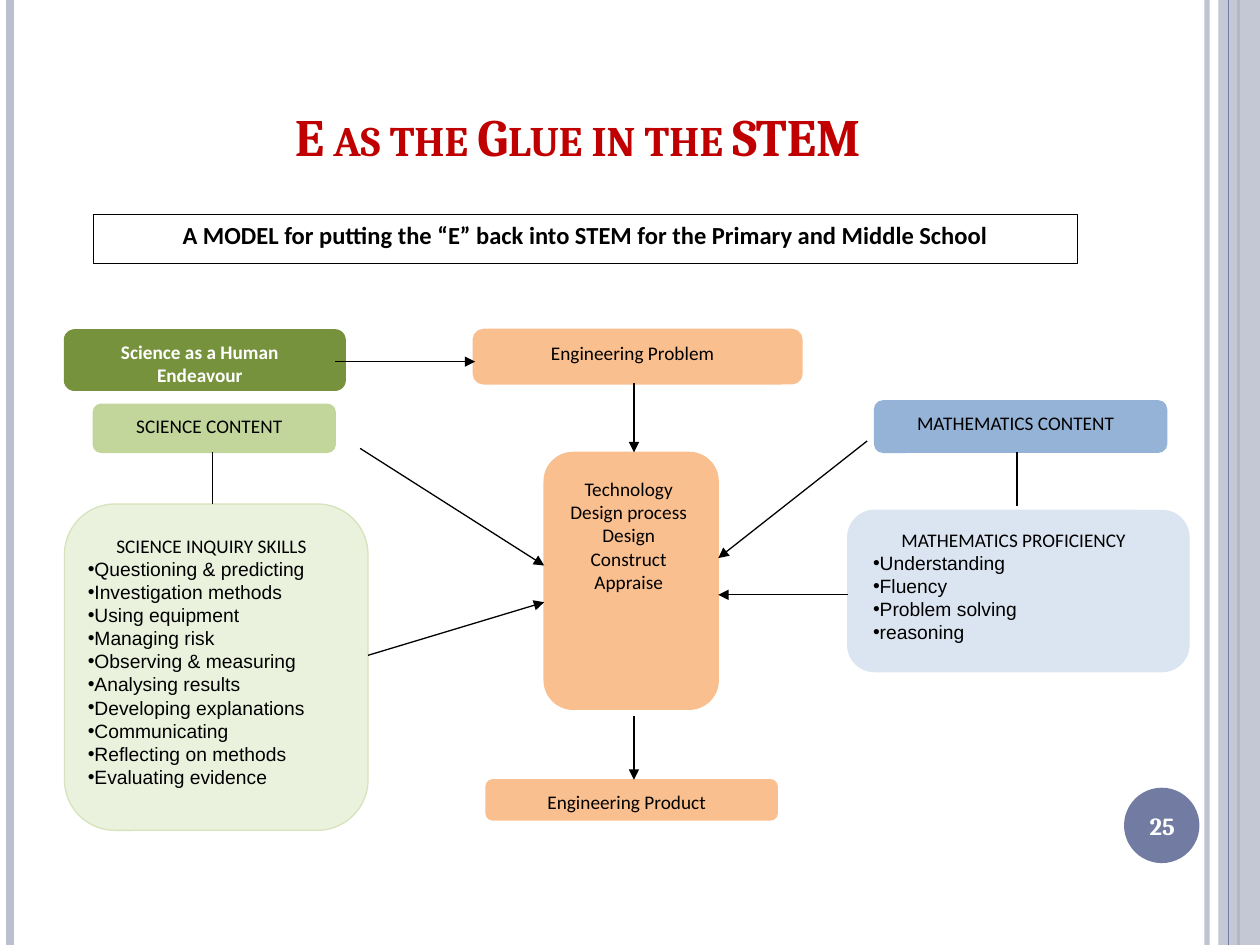
import pptx
import pptx.dml.color
import pptx.enum.shapes
import pptx.enum.text
import pptx.oxml.ns
import pptx.util
from lxml import etree
from pptx.util import Cm

COLORS = {
    "black": "000000", "white": "FFFFFF", "title": "C00000",
    "stripe": "BCBFCE", "accent": "727CA3", "orange": "FABF8F",
    "dark_green": "76923C", "green": "C2D69B", "pale_green": "EAF1DD",
    "green_edge": "D6E3BC", "blue": "95B3D7", "pale_blue": "DBE5F1",
}
SHAPES = pptx.enum.shapes.MSO_SHAPE
ALIGN = pptx.enum.text.PP_ALIGN
ANCHOR = pptx.enum.text.MSO_ANCHOR
LABEL_INSETS = (0.2, 0.08, 0.4, 0.08)


def rgb(color):
    return pptx.dml.color.RGBColor.from_string(COLORS[color])


def add_xml(parent, tag, **attributes):
    return etree.SubElement(parent, pptx.oxml.ns.qn(tag), attributes)


def set_alpha(fill_owner, percent):
    """Make the solid colour of a shape fill or a line partly transparent."""
    color = next(fill_owner.iter(pptx.oxml.ns.qn("a:srgbClr")))
    add_xml(color, "a:alpha", val=str(percent * 1000))


def add_box(slide, kind, box, fill, edge=None, width=0.75):
    shape = slide.shapes.add_shape(kind, *map(Cm, box))
    shape.shadow.inherit = False
    shape.fill.solid()
    shape.fill.fore_color.rgb = rgb(fill)
    if edge:
        shape.line.color.rgb = rgb(edge)
        shape.line.width = pptx.util.Pt(width)
    else:
        shape.line.fill.background()
    return shape


def add_line(slide, start, end, color="black", width=0.75, arrow=False):
    connector = slide.shapes.add_connector(
        pptx.enum.shapes.MSO_CONNECTOR.STRAIGHT, *map(Cm, start + end))
    connector.line.color.rgb = rgb(color)
    connector.line.width = pptx.util.Pt(width)
    if arrow:
        add_xml(connector.line._get_or_add_ln(), "a:tailEnd", type="triangle")
    add_xml(connector._element.spPr, "a:effectLst")
    return connector


def format_runs(paragraph, size, color="black", font="Calibri", bold=False):
    for run in paragraph.runs:
        run.font.size = pptx.util.Pt(size)
        run.font.name = font
        run.font.bold = bold
        run.font.color.rgb = rgb(color)


def write_lines(shape, lines, size=11, anchor=ANCHOR.TOP, **style):
    """Fill a shape with centred lines of one style."""
    frame = shape.text_frame
    frame.word_wrap = True
    frame.vertical_anchor = anchor
    frame.text = "\n".join(lines)
    for paragraph in frame.paragraphs:
        paragraph.alignment = ALIGN.CENTER
        format_runs(paragraph, size, **style)


def draw_backdrop(slide, width, height):
    def stripe(x, color, weight):
        return add_line(slide, (x, 0), (x, height), color, weight)

    set_alpha(stripe(width - 1.07, "stripe", 3)._element, 93)
    stripe(0.2, "stripe", 4.5)
    stripe(width - 0.43, "accent", 1.5)
    band = add_box(slide, SHAPES.RECTANGLE, (width - 0.84, 0, 0.84, height), "stripe")
    set_alpha(band._element, 87)
    stripe(width - 0.63, "accent", 0.75)


def draw_title(slide, box, text):
    title = slide.shapes.title
    title.left, title.top, title.width, title.height = map(Cm, box)
    write_lines(title, [text], 30, ANCHOR.MIDDLE,
                color="title", font="Cambria", bold=True)
    for run in title.text_frame.paragraphs[0].runs:
        run.font._element.set("cap", "small")


def draw_banner(slide, box, text):
    banner = add_box(slide, SHAPES.RECTANGLE, box, "white", "black")
    write_lines(banner, [text], 14, bold=True)


def draw_card(slide, box, fill, lines, insets=LABEL_INSETS, edge=None, width=0.75, **style):
    """Draw a rounded card with a text panel inset by left, top, right, bottom."""
    add_box(slide, SHAPES.ROUNDED_RECTANGLE, box, fill, edge or fill, width)
    left, top, right, bottom = insets
    x, y, card_width, card_height = box
    inner = (x + left, y + top, card_width - left - right, card_height - top - bottom)
    panel = add_box(slide, SHAPES.RECTANGLE, inner, fill, fill, width)
    write_lines(panel, lines, **style)
    return panel


def draw_skill_list(slide, box, fill, heading, items, insets, edge=None):
    panel = draw_card(slide, box, fill, [heading, *items], insets, edge)
    for paragraph in panel.text_frame.paragraphs[1:]:
        paragraph.alignment = ALIGN.LEFT
        format_runs(paragraph, 11, font="Arial")
        properties = paragraph._p.get_or_add_pPr()
        properties.set("marL", "0")
        properties.set("indent", "0")
        add_xml(properties, "a:buFont", typeface="Arial")
        add_xml(properties, "a:buChar", char="•")


def draw_page_number(slide, box, text):
    x, y, size, _ = box
    add_box(slide, SHAPES.OVAL, box, "accent")
    label = slide.shapes.add_textbox(*map(Cm, (x - 0.08, y + 0.05, size + 0.18, 1.45)))
    write_lines(label, [text], 14, ANCHOR.MIDDLE,
                color="white", font="Cambria", bold=True)


def draw_science(slide):
    draw_card(slide, (1.88, 8.15, 4.88, 0.97), "green", ["SCIENCE CONTENT"])
    draw_card(slide, (1.3, 6.65, 5.66, 1.22), "dark_green",
              ["Science as a Human Endeavour"], color="white", bold=True)
    draw_skill_list(
        slide, (1.3, 10.16, 6.12, 6.58), "pale_green", "SCIENCE INQUIRY SKILLS",
        ["Questioning & predicting", "Investigation methods", "Using equipment",
         "Managing risk", "Observing & measuring", "Analysing results",
         "Developing explanations", "Communicating", "Reflecting on methods",
         "Evaluating evidence"],
        (0.22, 0.48, 0.41, 0.51), "green_edge")


def draw_engineering(slide):
    draw_card(slide, (9.58, 6.68, 6.55, 1.02), "orange", ["Engineering Problem"],
              width=3)
    draw_card(slide, (10.97, 9.12, 3.51, 5.18), "orange",
              ["Technology", "Design process", "Design", "Construct", "Appraise"],
              (0.13, 0.38, 0.23, 0.41))
    draw_card(slide, (9.8, 15.72, 5.87, 0.81), "orange", ["Engineering Product"])


def draw_mathematics(slide):
    draw_card(slide, (17.63, 8.08, 5.89, 1.04), "blue", ["MATHEMATICS CONTENT"])
    draw_skill_list(
        slide, (17.09, 10.29, 6.88, 3.25), "pale_blue", "MATHEMATICS PROFICIENCY",
        ["Understanding", "Fluency", "Problem solving", "reasoning"],
        (0.26, 0.23, 0.45, 0.25))


def draw_links(slide):
    arrows = [
        ((6.76, 7.29), (9.58, 7.29)),
        ((7.26, 9.04), (10.97, 11.4)),
        ((7.42, 13.21), (10.97, 12.14)),
        ((17.48, 8.89), (14.48, 11.25)),
        ((17.09, 11.99), (14.48, 11.99)),
        ((12.78, 7.72), (12.78, 9.12)),
        ((12.78, 14.43), (12.78, 15.72)),
    ]
    for start, end in arrows:
        add_line(slide, start, end, arrow=True)
    add_line(slide, (4.29, 9.12), (4.29, 10.16))
    add_line(slide, (20.5, 9.12), (20.5, 10.21))


def main():
    presentation = pptx.Presentation()
    presentation.slide_width, presentation.slide_height = Cm(25.4), Cm(19.05)
    slide = presentation.slides.add_slide(presentation.slide_layouts[5])
    draw_backdrop(slide, 25.4, 19.05)
    draw_title(slide, (1.27, 0.76, 20.75, 3.94), "E as the Glue in the STEM")
    draw_science(slide)
    draw_engineering(slide)
    draw_mathematics(slide)
    draw_links(slide)
    draw_banner(slide, (1.88, 4.32, 19.84, 0.99),
                "A MODEL for putting the “E” back into STEM for the Primary and Middle School")
    draw_page_number(slide, (22.66, 15.88, 1.52, 1.52), "25")
    presentation.save("out.pptx")


if __name__ == "__main__":
    main()
